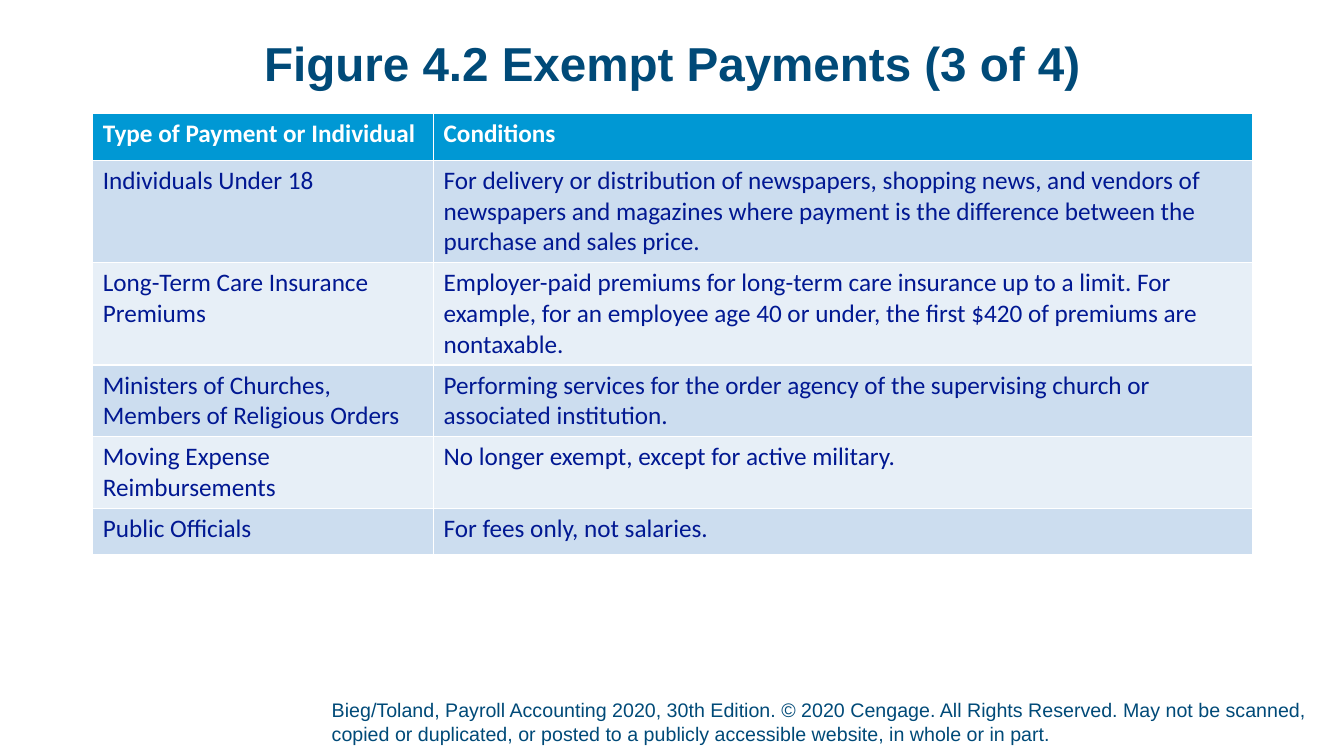
"""Build the slide on exempt payments with its table and copyright line."""
import pptx
import pptx.dml.color
import pptx.enum.text
import pptx.util
from pptx.util import Inches

TITLE = "Figure 4.2 Exempt Payments (3 of 4)"
FOOTER = ("Bieg/Toland, Payroll Accounting 2020, 30th Edition. © 2020 Cengage. "
          "All Rights Reserved. May not be scanned, copied or duplicated, or posted "
          "to a publicly accessible website, in whole or in part.")
ROWS = [
    ("Type of Payment or Individual", "Conditions"),
    ("Individuals Under 18",
     "For delivery or distribution of newspapers, shopping news, and vendors of "
     "newspapers and magazines where payment is the difference between the "
     "purchase and sales price."),
    ("Long-Term Care Insurance Premiums",
     "Employer-paid premiums for long-term care insurance up to a limit. For "
     "example, for an employee age 40 or under, the first $420 of premiums are "
     "nontaxable."),
    ("Ministers of Churches, Members of Religious Orders",
     "Performing services for the order agency of the supervising church or "
     "associated institution."),
    ("Moving Expense Reimbursements", "No longer exempt, except for active military."),
    ("Public Officials", "For fees only, not salaries."),
]
HEIGHTS = [0.46, 1, 1, 0.7, 0.7, 0.46]
WIDTHS = [3.38, 8.12]
LEFT, WIDTH = 0.92, sum(WIDTHS)
NAVY, BLUE, INK, WHITE = "004A78", "0098D4", "011892", "FFFFFF"
BANDS = ["E7EFF7", "CCDDEF"]


def rgb(value):
    return pptx.dml.color.RGBColor.from_string(value)


def style(p, name, size, color, bold=False):
    p.font.name, p.font.size, p.font.bold = name, pptx.util.Pt(size), bold
    p.font.color.rgb = rgb(color)


def frame(shape, anchor, bottom=0):
    tf = shape.text_frame
    tf.word_wrap = True
    tf.auto_size = pptx.enum.text.MSO_AUTO_SIZE.NONE
    tf.vertical_anchor = anchor
    tf.margin_left = tf.margin_top = tf.margin_right = 0
    tf.margin_bottom = Inches(bottom)
    return tf


def add_title(s):
    title = s.shapes.title
    title.left, title.top = Inches(LEFT), Inches(0.4)
    title.width, title.height = Inches(WIDTH), Inches(0.74)
    tf = frame(title, pptx.enum.text.MSO_ANCHOR.TOP)
    tf.text = TITLE
    p = tf.paragraphs[0]
    p.alignment = pptx.enum.text.PP_ALIGN.CENTER
    p.line_spacing = 0.9
    style(p, "Arial", 34, NAVY, True)


def add_payments(s):
    table = s.shapes.add_table(len(ROWS), len(WIDTHS), Inches(LEFT), Inches(1.13),
                               Inches(WIDTH), Inches(sum(HEIGHTS))).table
    for column, width in zip(table.columns, WIDTHS):
        column.width = Inches(width)
    for i, (row, texts) in enumerate(zip(table.rows, ROWS)):
        row.height = Inches(HEIGHTS[i])
        header = i == 0
        for cell, text in zip(row.cells, texts):
            cell.text = text
            cell.fill.solid()
            cell.fill.fore_color.rgb = rgb(BLUE if header else BANDS[i % 2])
            style(cell.text_frame.paragraphs[0], "Calibri", 18,
                  WHITE if header else INK, header)


def add_footer(s):
    box = s.shapes.add_textbox(Inches(3.29), Inches(6.92), Inches(9.79), Inches(0.52))
    tf = frame(box, pptx.enum.text.MSO_ANCHOR.BOTTOM, 0.05)
    tf.text = FOOTER
    style(tf.paragraphs[0], "Arial", 14, NAVY)


def main():
    prs = pptx.Presentation()
    prs.slide_width, prs.slide_height = Inches(13.33), Inches(7.5)
    s = prs.slides.add_slide(prs.slide_layouts[5])
    add_footer(s)
    add_payments(s)
    add_title(s)
    prs.save("out.pptx")


if __name__ == "__main__":
    main()
